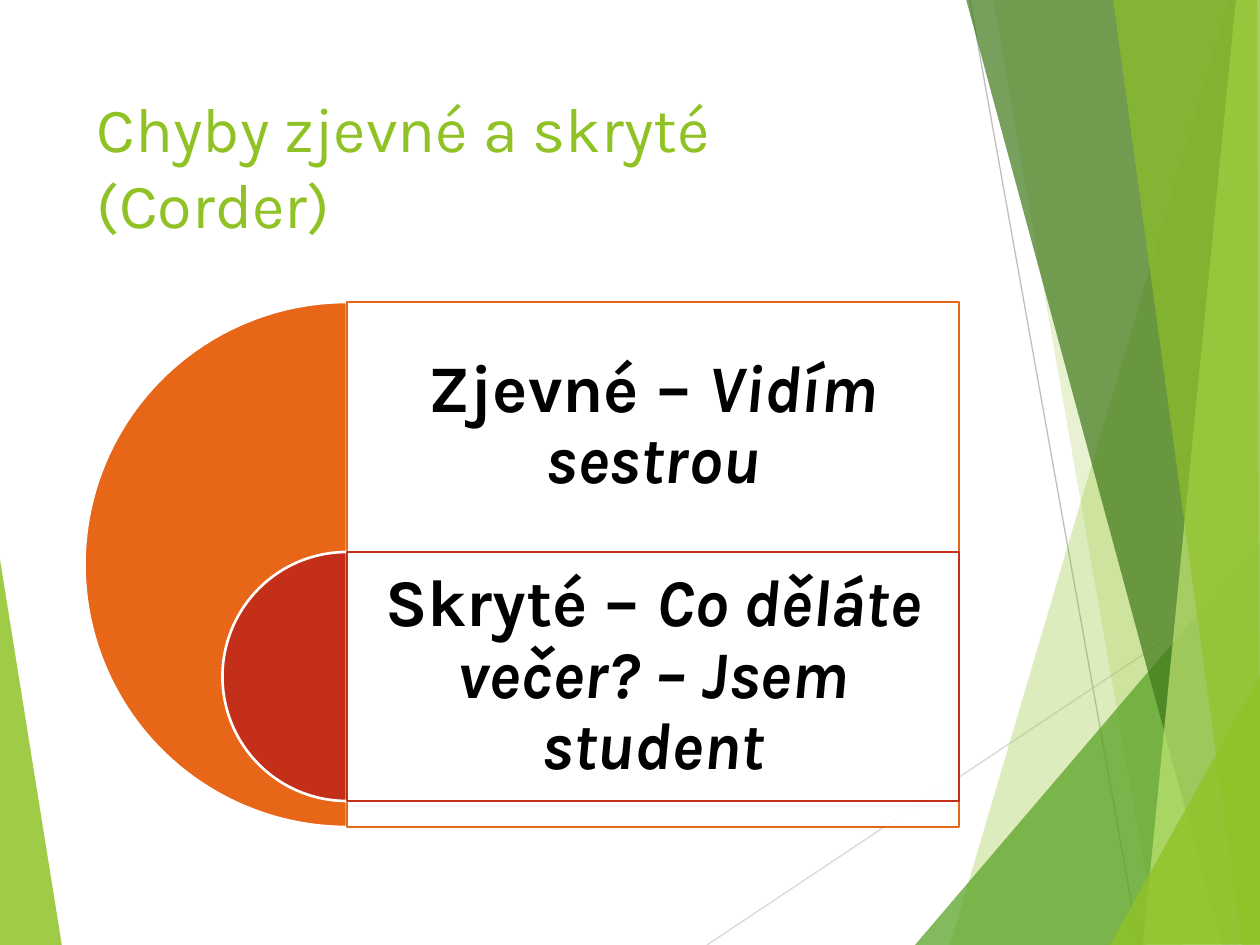
"""Build the slide on overt and covert errors."""
from lxml import etree
from pptx import Presentation
from pptx.dml.color import RGBColor
from pptx.enum.shapes import MSO_CONNECTOR, MSO_SHAPE
from pptx.enum.text import MSO_ANCHOR, PP_ALIGN
from pptx.oxml.ns import qn
from pptx.util import Emu, Pt

PX = 914400 / 126
WIDTH, HEIGHT = 1260, 945
FONT = "Karla"
STRAIGHT = MSO_CONNECTOR.STRAIGHT
PIE, RECTANGLE = MSO_SHAPE.PIE, MSO_SHAPE.RECTANGLE
TOP, MIDDLE = MSO_ANCHOR.TOP, MSO_ANCHOR.MIDDLE
LEFT, CENTER = PP_ALIGN.LEFT, PP_ALIGN.CENTER

COLORS = {
    "lime": "90C226",
    "green": "54A021",
    "forest": "3F7819",
    "pale": "C0E474",
    "orange": "E76618",
    "red": "C42F1A",
    "white": "FFFFFF",
    "black": "000000",
    "silver": "D9D9D9",
    "gray": "BFBFBF",
}

RAYS = [
    ("silver", (707, 945), (1261, 576)),
    ("gray", (970, 0), (1139, 945)),
]
LEFT_FACET = ("lime", 85, [(-1, 553), (62, 946), (-1, 945)])
RIGHT_FACETS = [
    ("lime", 30, [(1229, 0), (950, 945), (1263, 946), (1261, 1)]),
    ("lime", 20, [(993, -1), (1158, 945), (1261, 945), (1261, -1)]),
    ("green", 72, [(915, 945), (1260, 541), (1261, 945)]),
    ("forest", 70, [(966, -1), (1222, 945), (1261, 944), (1261, -1)]),
    ("pale", 70, [(1236, -1), (1143, 945), (1261, 945), (1260, -1)]),
    ("lime", 65, [(1113, -1), (1242, 945), (1260, 945), (1257, -1)]),
    ("lime", 80, [(1110, 945), (1261, 674), (1261, 944)]),
]

PANEL_LEFT, PANEL_WIDTH, ROW_HEIGHT = 347, 612, 249
ERRORS = [
    ("orange", 302, 525, "Zjevné – ", "Vidím sestrou"),
    ("red", 552, ROW_HEIGHT, "Skryté – ", "Co děláte večer? – Jsem student"),
]


def px(*lengths):
    """Turn px lengths into EMU."""
    return [Emu(round(length * PX)) for length in lengths]


def color(name):
    """Look up a named colour."""
    return RGBColor.from_string(COLORS[name])


def paint(shape, fill, opacity=100, line=None):
    """Set fill, opacity and outline of a shape without a shadow."""
    shape.shadow.inherit = False
    shape.fill.solid()
    shape.fill.fore_color.rgb = color(fill)
    if opacity < 100:
        tint = shape.fill._xPr.find(".//" + qn("a:srgbClr"))
        etree.SubElement(tint, qn("a:alpha"), val=str(opacity * 1000))
    if line:
        shape.line.color.rgb = color(line)
        shape.line.width = Pt(1.5)
    else:
        shape.line.fill.background()


def add_facet(page, fill, opacity, points):
    """Add a translucent polygon."""
    builder = page.shapes.build_freeform(*points[0], scale=PX)
    builder.add_line_segments(points[1:], close=True)
    paint(builder.convert_to_shape(), fill, opacity)


def add_ray(page, stroke, start, end):
    """Add a thin straight line."""
    ray = page.shapes.add_connector(STRAIGHT, *px(*start, *end))
    ray.line.color.rgb = color(stroke)
    ray.line.width = Pt(0.75)
    etree.SubElement(ray._element.spPr, qn("a:effectLst"))


def add_text(page, place, spans, size, fill, bold=False, align=LEFT,
             anchor=TOP, insets=(13, 6), spacing=1.0):
    """Add a wrapped text box of (text, italic) spans."""
    frame = page.shapes.add_textbox(*px(*place)).text_frame
    frame.word_wrap = True
    frame.vertical_anchor = anchor
    frame.margin_left = frame.margin_right = px(insets[0])[0]
    frame.margin_top = frame.margin_bottom = px(insets[1])[0]
    para = frame.paragraphs[0]
    para.alignment = align
    para.line_spacing = spacing
    for text, italic in spans:
        span = para.add_run()
        span.text = text
        span.font.name = FONT
        span.font.size = Pt(size)
        span.font.bold = bold
        span.font.italic = italic
        span.font.color.rgb = color(fill)


def add_error(page, accent, top, size, label, example):
    """Add a half disc with its outlined panel and text."""
    disc = page.shapes.add_shape(
        PIE, *px(PANEL_LEFT - size / 2, top, size, size))
    disc.adjustments[0] = 54
    disc.adjustments[1] = 162
    paint(disc, accent, line="white")
    panel = page.shapes.add_shape(
        RECTANGLE, *px(PANEL_LEFT, top, PANEL_WIDTH, size))
    paint(panel, "white", 90, accent)
    add_text(page, (PANEL_LEFT, top, PANEL_WIDTH, ROW_HEIGHT),
             [(label, False), (example, True)], 38, "black", bold=True,
             align=CENTER, anchor=MIDDLE, insets=(20, 20), spacing=0.9)


def main():
    """Build and save the deck."""
    deck = Presentation()
    deck.slide_width, deck.slide_height = px(WIDTH, HEIGHT)
    page = deck.slides.add_slide(deck.slide_layouts[6])
    add_facet(page, *LEFT_FACET)
    for ray in RAYS:
        add_ray(page, *ray)
    for facet in RIGHT_FACETS:
        add_facet(page, *facet)
    add_text(page, (84, 84, 874, 181),
             [("Chyby zjevné a skryté (Corder)", False)], 36, "lime")
    for error in ERRORS:
        add_error(page, *error)
    deck.save("out.pptx")


if __name__ == "__main__":
    main()
